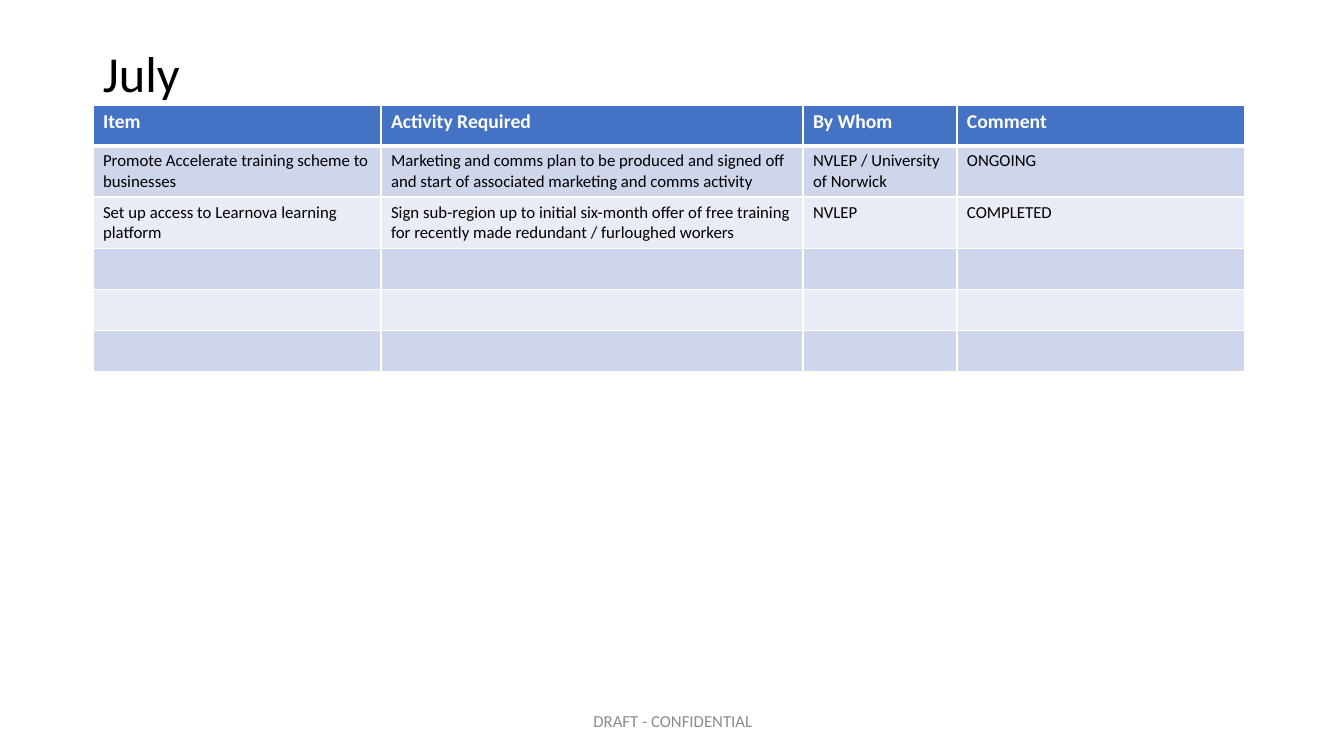
from lxml import etree
from pptx import Presentation
from pptx import util as u
from pptx.dml.color import RGBColor
from pptx.enum import text
from pptx.oxml.ns import qn

SCALE = 914400 / 100.8
FONT = "Calibri"
WHITE = RGBColor(0xFF, 0xFF, 0xFF)
BLACK = RGBColor(0, 0, 0)
GREY = RGBColor(0x8C, 0x8C, 0x8C)
BLUE = RGBColor(0x44, 0x72, 0xC4)
BANDS = (RGBColor(0xCF, 0xD5, 0xEA), RGBColor(0xE9, 0xEB, 0xF5))

COLS = (288, 422, 154, 288)
ROWS = (41, 48, 41, 41, 41, 41)
TASKS = (
    ("Item", "Activity Required", "By Whom", "Comment"),
    ("Promote Accelerate training scheme to businesses",
     "Marketing and comms plan to be produced and signed off "
     "and start of associated marketing and comms activity",
     "NVLEP / University of Norwick", "ONGOING"),
    ("Set up access to Learnova learning platform",
     "Sign sub-region up to initial six-month offer of free training "
     "for recently made redundant / furloughed workers",
     "NVLEP", "COMPLETED"),
)


def px(num):
    return u.Emu(round(num * SCALE))


def add_run(para, words, size, color, bold=False):
    run = para.add_run()
    run.text = words
    font = run.font
    font.name = FONT
    font.size = u.Pt(size)
    font.bold = bold
    font.color.rgb = color


def add_label(slide, box, words, size, color, align):
    frame = slide.shapes.add_textbox(*map(px, box)).text_frame
    frame.word_wrap = True
    frame.vertical_anchor = text.MSO_ANCHOR.MIDDLE
    para = frame.paragraphs[0]
    para.alignment = align
    para.line_spacing = 0.9 if size > 30 else 1.0
    add_run(para, words, size, color)


def set_edges(cell, base):
    props = cell._tc.get_or_add_tcPr()
    widths = {"lnL": 1, "lnR": 1, "lnT": 1, "lnB": base}
    for spot, (side, width) in enumerate(widths.items()):
        line = etree.Element(qn(f"a:{side}"), w=str(u.Pt(width)))
        fill = etree.SubElement(line, qn("a:solidFill"))
        etree.SubElement(fill, qn("a:srgbClr"), val=str(WHITE))
        props.insert(spot, line)


def set_cell(cell, words, head, fill):
    cell.fill.solid()
    cell.fill.fore_color.rgb = fill
    set_edges(cell, 3 if head else 1)
    if words:
        add_run(cell.text_frame.paragraphs[0], words,
                14 if head else 12, WHITE if head else BLACK, head)


def add_plan(slide, left, top):
    frame = slide.shapes.add_table(len(ROWS), len(COLS), px(left), px(top),
                                   px(sum(COLS)), px(sum(ROWS)))
    table = frame.table
    for col, width in zip(table.columns, COLS):
        col.width = px(width)
    for r, (row, height) in enumerate(zip(table.rows, ROWS)):
        row.height = px(height)
        words = TASKS[r] if r < len(TASKS) else ("",) * len(COLS)
        fill = BANDS[(r - 1) % 2] if r else BLUE
        for cell, word in zip(row.cells, words):
            set_cell(cell, word, r == 0, fill)


def main():
    deck = Presentation()
    deck.slide_width, deck.slide_height = px(1344), px(756)
    slide = deck.slides.add_slide(deck.slide_layouts[6])
    add_plan(slide, 93, 105)
    add_label(slide, (93, 40, 1159, 73), "July", 36, BLACK,
              text.PP_ALIGN.LEFT)
    add_label(slide, (446, 701, 454, 40), "DRAFT - CONFIDENTIAL", 12, GREY,
              text.PP_ALIGN.CENTER)
    deck.save("out.pptx")


if __name__ == "__main__":
    main()
